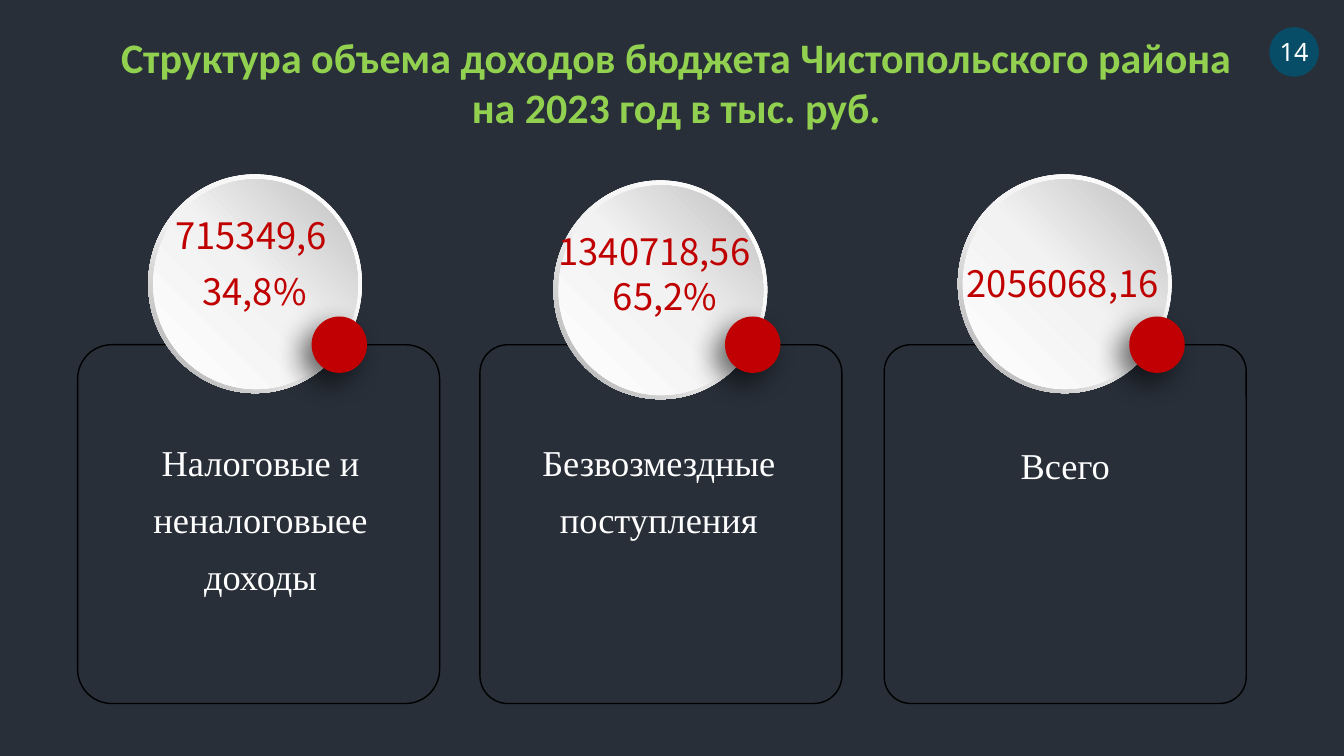
from lxml.etree import SubElement
from pptx import Presentation
from pptx.dml.color import RGBColor
from pptx.enum.shapes import MSO_SHAPE
from pptx.enum.text import MSO_ANCHOR, MSO_AUTO_SIZE, PP_ALIGN
from pptx.oxml import parse_xml
from pptx.oxml.ns import nsdecls, qn
from pptx.util import Inches, Pt


def paint(target, color):
    if hasattr(target, "solid"):
        target.solid()
        target = target.fore_color
    target.rgb = RGBColor.from_string(color)


def write(box, text, font, size, color, align=PP_ALIGN.LEFT, spacing=None, bold=False):
    frame = box.text_frame
    frame.text = text
    para = frame.paragraphs[0]
    para.alignment = align
    para.line_spacing = spacing
    span = para.runs[0]
    span.font.name = font
    span.font.size = Pt(size)
    span.font.bold = bold
    paint(span.font.color, color)
    for tag in ("a:ea", "a:cs"):
        SubElement(span.font._element, qn(tag), typeface=font)


deck = Presentation()
deck.slide_width = Inches(13.33)
deck.slide_height = Inches(7.5)
page = deck.slides.add_slide(deck.slide_layouts[5])
paint(page.background.fill, "282F39")

title = page.shapes.title
title.left, title.top = Inches(1.07), Inches(0.26)
title.width, title.height = Inches(11.28), Inches(1.11)
title.text_frame.auto_size = MSO_AUTO_SIZE.NONE
title.text_frame.vertical_anchor = MSO_ANCHOR.TOP
write(title, "Структура объема доходов бюджета Чистопольского района на 2023 год в тыс. руб.",
      "Calibri", 30, "92D050", PP_ALIGN.CENTER, bold=True)

cards = [
    (0.77, 0.095, 1.47, 1.73, 3.09, 1.16, 4.24, 1.71, "Налоговые и неналоговыее доходы",
     [("715349,6", 1.64, 2.07, 1.79), ("34,8%", 1.91, 2.62, 1.27)]),
    (4.76, 0.078, 5.49, 1.79, 7.19, 5.11, 4.24, 1.08, "Безвозмездные поступления",
     [("1340718,56", 5.44, 2.22, 2.21), ("65,2%", 5.98, 2.67, 1.27)]),
    (8.77, 0.074, 9.5, 1.73, 11.2, 9.14, 4.27, 0.51, "Всего",
     [("2056068,16", 9.49, 2.54, 2.23)]),
]

for (card_left, corner, disc_left, disc_top, dot_left,
     label_left, label_top, label_height, label_text, figures) in cards:
    card = page.shapes.add_shape(MSO_SHAPE.ROUNDED_RECTANGLE, Inches(card_left), Inches(3.42),
                                 Inches(3.59), Inches(3.56))
    card.adjustments[0] = corner
    card.shadow.inherit = False
    card.fill.background()
    paint(card.line.fill, "000000")
    card.line.width = Pt(1)

    discs = [
        (MSO_SHAPE.DONUT, 0, 2.12, 2.17, 55, "A6A6A6", 135),
        (MSO_SHAPE.OVAL, 0.05, 2.03, 2.08, 51, "BFBFBF", 315),
    ]
    for kind, inset, width, height, middle, dark, angle in discs:
        disc = page.shapes.add_shape(kind, Inches(disc_left + inset), Inches(disc_top + inset),
                                     Inches(width), Inches(height))
        if kind == MSO_SHAPE.DONUT:
            disc.adjustments[0] = 0.049
        disc.shadow.inherit = False
        disc.line.fill.background()
        stops = "".join(
            f'<a:gs pos="{place * 1000}"><a:srgbClr val="{color}"/></a:gs>'
            for place, color in ((0, "FFFFFF"), (middle, "F2F2F2"), (100, dark)))
        disc._element.spPr.find(qn("a:prstGeom")).addnext(parse_xml(
            f'<a:gradFill {nsdecls("a")} rotWithShape="1"><a:gsLst>{stops}</a:gsLst>'
            f'<a:lin ang="{angle * 60000}" scaled="0"/></a:gradFill>'))

    dot = page.shapes.add_shape(MSO_SHAPE.OVAL, Inches(dot_left), Inches(3.14),
                                Inches(0.55), Inches(0.56))
    paint(dot.fill, "C00002")
    dot.line.fill.background()
    dot._element.spPr.append(parse_xml(
        f'<a:effectLst {nsdecls("a")}><a:outerShdw blurRad="{Pt(20)}" dist="{Pt(10)}" '
        'dir="8100000" algn="tr" rotWithShape="0"><a:srgbClr val="000000">'
        '<a:alpha val="60000"/></a:srgbClr></a:outerShdw></a:effectLst>'))

    label = page.shapes.add_textbox(Inches(label_left), Inches(label_top),
                                    Inches(2.85), Inches(label_height))
    frame = label.text_frame
    frame.word_wrap = True
    frame.margin_left = frame.margin_right = frame.margin_top = frame.margin_bottom = 0
    write(label, label_text, "Times New Roman", 26, "FFFFFF", PP_ALIGN.CENTER, 1.3)

    for text, left, top, width in figures:
        figure = page.shapes.add_textbox(Inches(left), Inches(top), Inches(width), Inches(0.54))
        figure.text_frame.word_wrap = False
        write(figure, text, "Noto Sans CJK SC", 26, "C00000")

badge = page.shapes.add_shape(MSO_SHAPE.OVAL, Inches(12.59), Inches(0.27),
                              Inches(0.49), Inches(0.49))
badge.shadow.inherit = False
paint(badge.fill, "074D67")
badge.line.fill.background()
badge.text_frame.word_wrap = False
badge.text_frame.vertical_anchor = MSO_ANCHOR.MIDDLE
write(badge, "14", "Noto Sans", 18, "FFFFFF", PP_ALIGN.CENTER)

deck.save("out.pptx")
